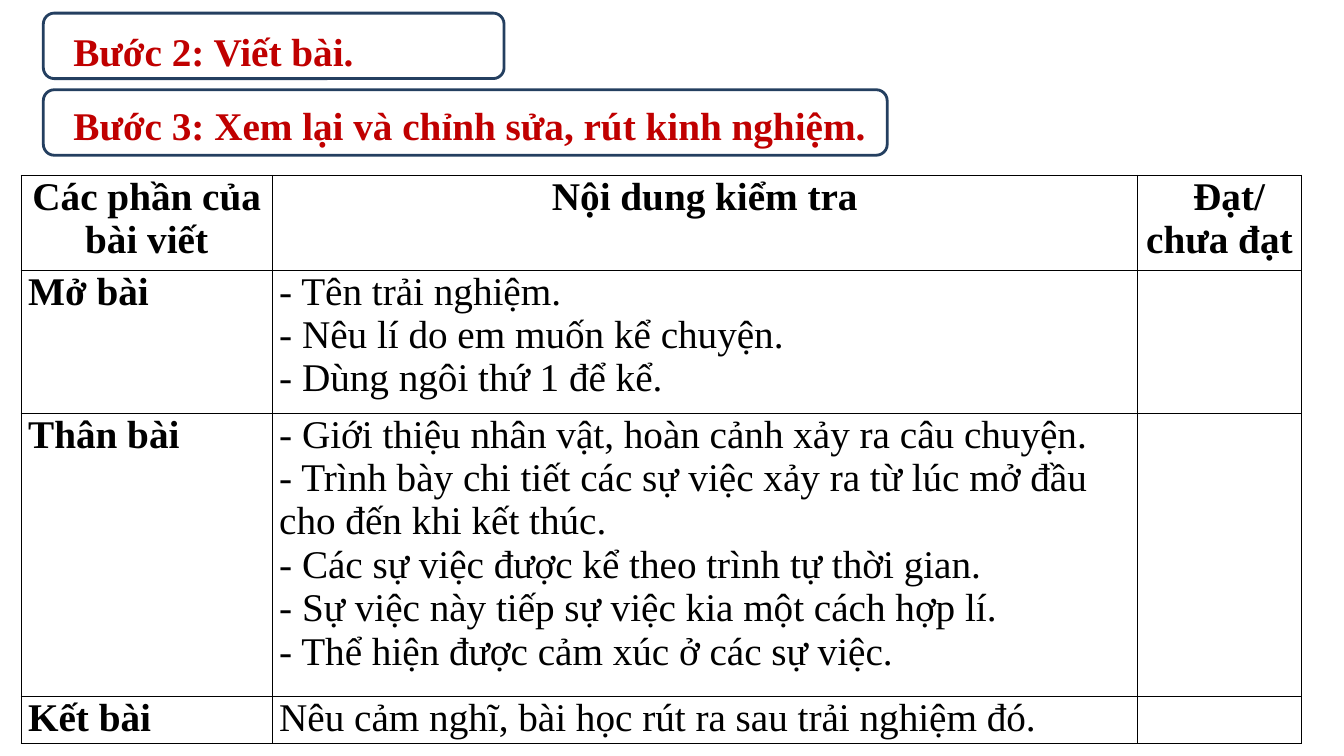
from lxml.etree import SubElement
from pptx import Presentation
from pptx.dml.color import RGBColor
from pptx.enum.shapes import MSO_SHAPE as Shape
from pptx.enum.text import MSO_AUTO_SIZE as Auto, PP_ALIGN as Align
from pptx.oxml.ns import qn
from pptx.util import Inches, Pt

BLACK = RGBColor(0x00, 0x00, 0x00)
WHITE = RGBColor(0xFF, 0xFF, 0xFF)
RED = RGBColor(0xC0, 0x00, 0x00)
NAVY = RGBColor(0x24, 0x3F, 0x60)

STEPS = [
    ("Bước 2: Viết bài.", 0.13, 4.57, 0.15, 4.23),
    ("Bước 3: Xem lại và chỉnh sửa, rút kinh nghiệm.", 0.89, 8.37, 0.89, 8.18),
]
COLS = [2.49, 8.58, 1.63]
ROWS = [0.94, 1.42, 2.81, 0.46]
CELLS = [
    [["Các phần của bài viết"], ["Nội dung kiểm tra"], ["Đạt/", "chưa đạt"]],
    [["Mở bài"], [
        "- Tên trải nghiệm.",
        "- Nêu lí do em muốn kể chuyện.",
        "- Dùng ngôi thứ 1 để kể.",
    ], []],
    [["Thân bài"], [
        "- Giới thiệu nhân vật, hoàn cảnh xảy ra câu chuyện.",
        "- Trình bày chi tiết các sự việc xảy ra từ lúc mở đầu cho đến khi kết thúc.",
        "- Các sự việc được kể theo trình tự thời gian.",
        "- Sự việc này tiếp sự việc kia một cách hợp lí.",
        "- Thể hiện được cảm xúc ở các sự việc.",
    ], []],
    [["Kết bài"], ["Nêu cảm nghĩ, bài học rút ra sau trải nghiệm đó."], []],
]


def write(frame, lines, color=BLACK, bold=False, align=Align.LEFT, space=None, after=0):
    frame.word_wrap = True
    for i, line in enumerate(lines):
        para = frame.add_paragraph() if i else frame.paragraphs[0]
        para.alignment = align
        para.line_spacing = space
        para.space_after = Pt(after)
        run = para.add_run()
        run.text = line
        font = run.font
        font.name = "Times New Roman"
        font.size = Pt(28)
        font.bold = bold
        font.color.rgb = color


class Page:
    def __init__(self, deck):
        self.shapes = deck.slides.add_slide(deck.slide_layouts[6]).shapes

    def frame(self, top, width):
        box = self.shapes.add_shape(
            Shape.ROUNDED_RECTANGLE, Inches(0.43), Inches(top), Inches(width), Inches(0.65))
        box.shadow.inherit = False
        box.fill.background()
        box.line.color.rgb = NAVY
        box.line.width = Pt(2)

    def label(self, text, top, width):
        box = self.shapes.add_textbox(Inches(0.63), Inches(top), Inches(width), Inches(0.63))
        write(box.text_frame, [text], color=RED, bold=True, space=1.15, after=8)
        box.text_frame.auto_size = Auto.SHAPE_TO_FIT_TEXT

    def border(self, cell):
        props = cell._tc.get_or_add_tcPr()
        for i, side in enumerate(("lnL", "lnR", "lnT", "lnB")):
            line = SubElement(props, qn(f"a:{side}"), w=str(Pt(1)))
            fill = SubElement(line, qn("a:solidFill"))
            SubElement(fill, qn("a:srgbClr"), val=str(BLACK))
            props.insert(i, line)

    def table(self, left, top):
        table = self.shapes.add_table(
            len(ROWS), len(COLS), Inches(left), Inches(top),
            Inches(sum(COLS)), Inches(sum(ROWS))).table
        table.horz_banding = False
        for col, width in zip(table.columns, COLS):
            col.width = Inches(width)
        for r, (row, height) in enumerate(zip(table.rows, ROWS)):
            row.height = Inches(height)
            for c, cell in enumerate(row.cells):
                cell.margin_left = cell.margin_right = Inches(0.07)
                cell.margin_top = cell.margin_bottom = 0
                cell.fill.solid()
                cell.fill.fore_color.rgb = WHITE
                self.border(cell)
                write(cell.text_frame, CELLS[r][c], bold=r == 0 or c == 0,
                      align=Align.LEFT if r else Align.CENTER)
        mark = table.cell(0, 2).text_frame.paragraphs[0]
        mark._p.get_or_add_pPr().set("marL", str(Inches(0.19)))


def main():
    deck = Presentation()
    deck.slide_width = Inches(13.33)
    deck.slide_height = Inches(7.5)
    page = Page(deck)
    for text, top, width, text_top, text_width in STEPS:
        page.frame(top, width)
        page.label(text, text_top, text_width)
    page.table(0.21, 1.74)
    deck.save("out.pptx")


if __name__ == "__main__":
    main()
